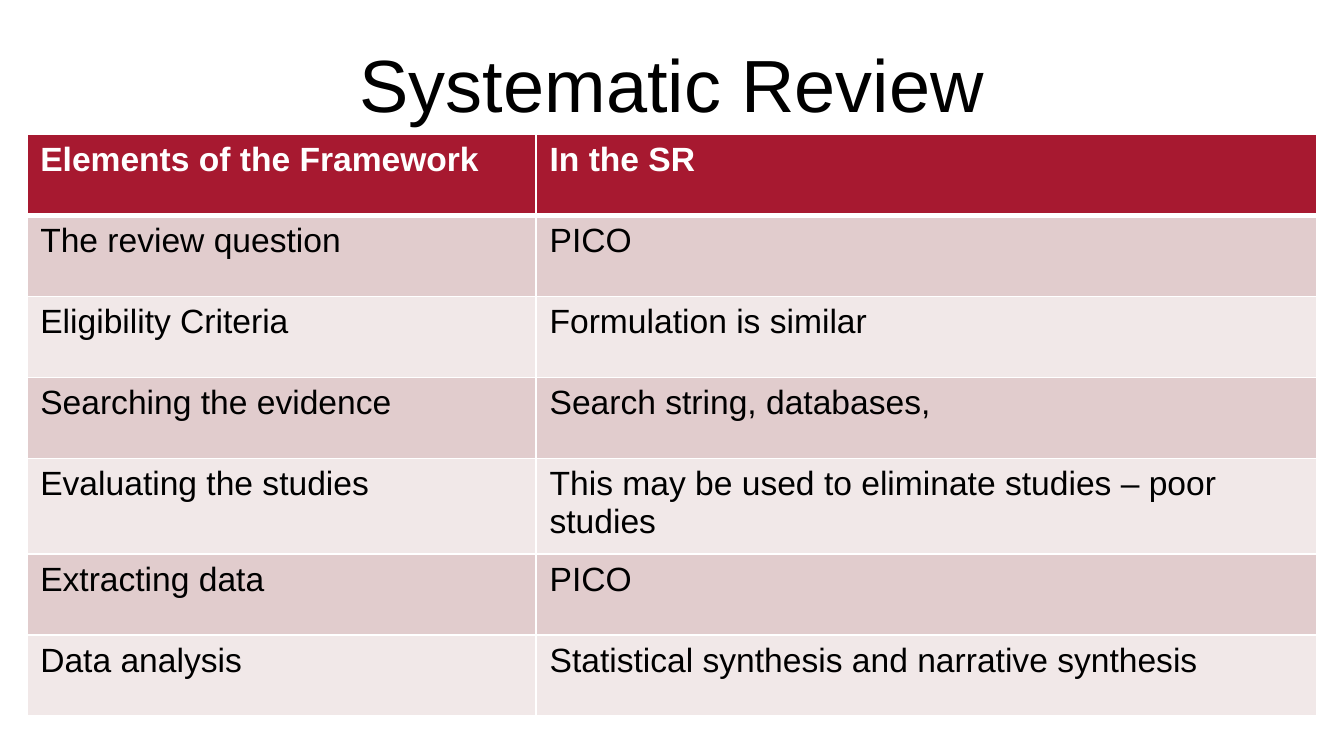
from dataclasses import dataclass

from lxml.etree import SubElement
from pptx import Presentation
from pptx.dml.color import RGBColor
from pptx.enum.text import MSO_ANCHOR, PP_ALIGN
from pptx.oxml.ns import qn
from pptx.util import Inches, Pt


@dataclass(frozen=True)
class Theme:
    font: str = "Arial"
    title_size: float = 39.6
    body_size: float = 18
    black: str = "000000"
    white: str = "FFFFFF"
    header_fill: str = "A71930"
    band_fills: tuple[str, str] = ("E1CCCD", "F1E8E8")
    thin_border: float = 1
    header_border: float = 3


@dataclass(frozen=True)
class FrameworkRow:
    element: str
    in_review: str
    is_tall: bool = False


THEME = Theme()
SLIDE_WIDTH = 10
SLIDE_HEIGHT = SLIDE_WIDTH * 9 / 16
COLUMN_WIDTHS = (3.79, 5.81)
TABLE_HEIGHT = 4.33
TALL_ROW = 0.71
FRAMEWORK = (
    FrameworkRow("Elements of the Framework", "In the SR"),
    FrameworkRow("The review question", "PICO"),
    FrameworkRow("Eligibility Criteria", "Formulation is similar"),
    FrameworkRow("Searching the evidence", "Search string, databases,"),
    FrameworkRow("Evaluating the studies",
                 "This may be used to eliminate studies – poor studies", is_tall=True),
    FrameworkRow("Extracting data", "PICO"),
    FrameworkRow("Data analysis", "Statistical synthesis and narrative synthesis"),
)


def write_text(frame, text: str, size: float, color: str, bold: bool = False) -> None:
    frame.word_wrap = True
    run = frame.paragraphs[0].add_run()
    run.text = text
    formats = {"name": THEME.font, "size": Pt(size), "bold": bold}
    for attribute, value in formats.items():
        setattr(run.font, attribute, value)
    run.font.color.rgb = RGBColor.from_string(color)


def add_borders(cell, top: float, bottom: float) -> None:
    properties = cell._tc.get_or_add_tcPr()
    widths = {"L": THEME.thin_border, "R": THEME.thin_border, "T": top, "B": bottom}
    for side, width in widths.items():
        line = SubElement(properties, qn(f"a:ln{side}"), w=str(Pt(width)))
        SubElement(SubElement(line, qn("a:solidFill")), qn("a:srgbClr"), val=THEME.white)


def add_title(slide, text: str) -> None:
    title = slide.shapes.add_textbox(Inches(0.5), Inches(0.23), Inches(9), Inches(0.78))
    title.text_frame.vertical_anchor = MSO_ANCHOR.MIDDLE
    write_text(title.text_frame, text, THEME.title_size, THEME.black)
    title.text_frame.paragraphs[0].alignment = PP_ALIGN.CENTER


def add_framework_table(slide, rows: tuple[FrameworkRow, ...]) -> None:
    table = slide.shapes.add_table(
        len(rows), len(COLUMN_WIDTHS), Inches(0.2), Inches(1),
        Inches(sum(COLUMN_WIDTHS)), Inches(TABLE_HEIGHT)).table
    for column, width in zip(table.columns, COLUMN_WIDTHS):
        column.width = Inches(width)

    # Rows of one line share the height left by the tall ones
    tall_count = sum(row.is_tall for row in rows)
    plain_height = (TABLE_HEIGHT - tall_count * TALL_ROW) / (len(rows) - tall_count)

    for index, row in enumerate(rows):
        table.rows[index].height = Inches(TALL_ROW if row.is_tall else plain_height)
        is_header = index == 0
        fill = THEME.header_fill if is_header else THEME.band_fills[(index - 1) % 2]
        color = THEME.white if is_header else THEME.black
        top = THEME.header_border if index == 1 else THEME.thin_border
        bottom = THEME.header_border if is_header else THEME.thin_border
        for cell, text in zip(table.rows[index].cells, (row.element, row.in_review)):
            add_borders(cell, top, bottom)
            cell.fill.solid()
            cell.fill.fore_color.rgb = RGBColor.from_string(fill)
            write_text(cell.text_frame, text, THEME.body_size, color, is_header)


def main() -> None:
    presentation = Presentation()
    presentation.slide_width = Inches(SLIDE_WIDTH)
    presentation.slide_height = Inches(SLIDE_HEIGHT)
    slide = presentation.slides.add_slide(presentation.slide_layouts[6])

    # Heading
    add_title(slide, "Systematic Review")

    # Framework elements and their use in the review
    add_framework_table(slide, FRAMEWORK)

    presentation.save("out.pptx")


if __name__ == "__main__":
    main()
